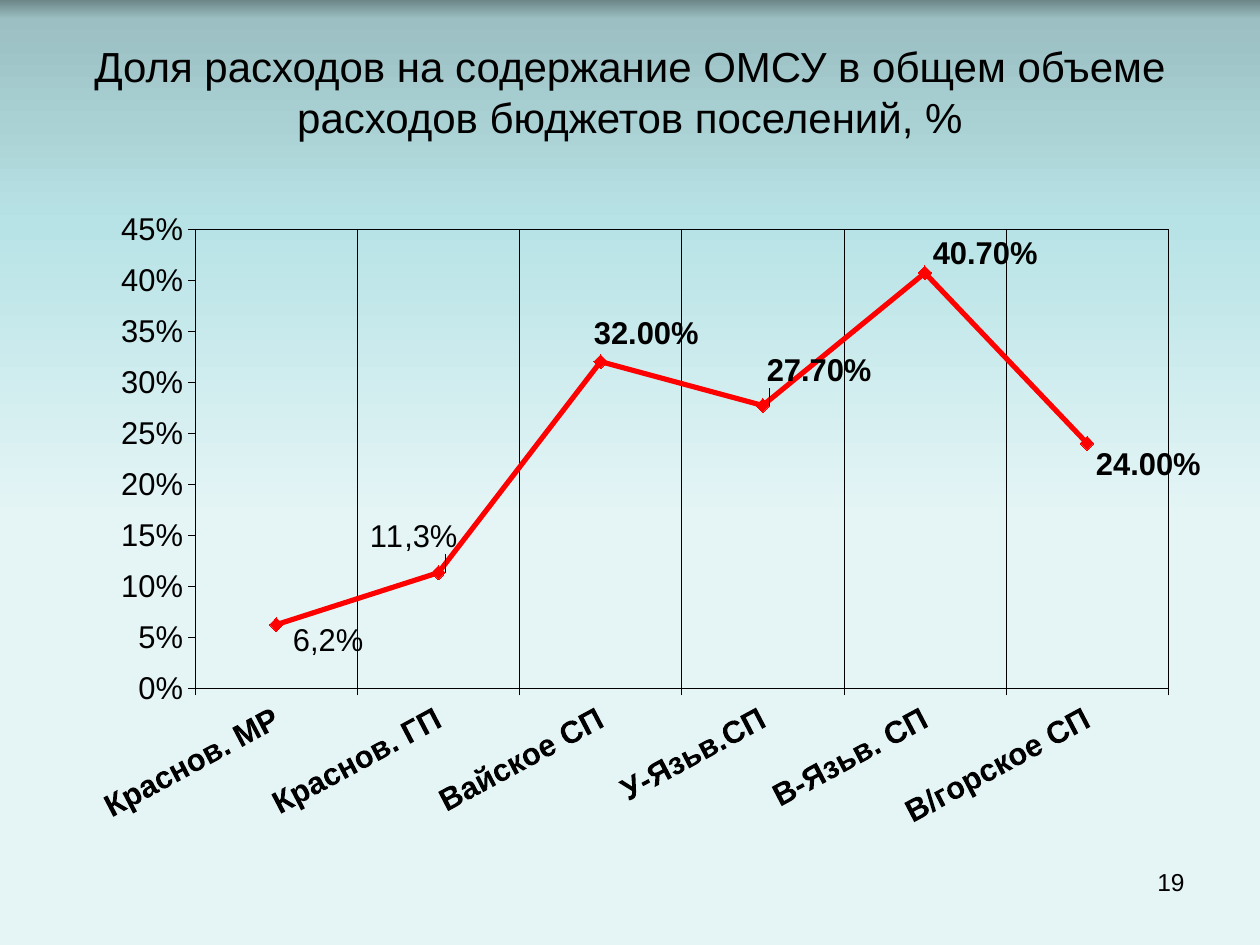
from dataclasses import dataclass, field

from lxml.etree import SubElement
from pptx import Presentation
from pptx.chart.data import CategoryChartData
from pptx.dml.color import RGBColor
from pptx.enum.chart import XL_CHART_TYPE, XL_LABEL_POSITION, XL_MARKER_STYLE, XL_TICK_MARK
from pptx.enum.text import MSO_ANCHOR, PP_ALIGN
from pptx.oxml import parse_xml
from pptx.oxml.ns import nsdecls, qn
from pptx.util import Cm, Pt

COLORS = {
    "text": "000000",
    "share": "FF0000",
    "top edge": "6D8688",
    "upper": "9BBFC2",
    "middle": "B8E3E6",
    "lower": "E5F5F6",
}
BACKDROP = [(0, "top edge"), (2, "upper"), (24, "middle"), (55, "lower"), (100, "lower")]

SHARES = {
    "Краснов. МР": 0.062,
    "Краснов. ГП": 0.113,
    "Вайское СП": 0.32,
    "У-Язьв.СП": 0.277,
    "В-Язьв. СП": 0.407,
    "В/горское СП": 0.24,
}
LABEL_SHIFTS = [(0.1, 0.32), (-1.65, -0.73), (-0.38, -0.58), (-0.16, -0.7), (-0.08, -0.4), (-0.06, 0.42)]
LABEL_TEXTS = {0: "6,2%", 1: "11,3%"}

CHART_BOX = (1.63, 3.73, 22.58, 13.87)
PLOT_BOX = (2.35, 0.89, 19.98, 9.25)


def style_font(font, size=18, bold=False, color="text", name="Arial"):
    font.name = name
    font.size = Pt(size)
    font.bold = bold
    font.color.rgb = RGBColor.from_string(COLORS[color])


def write(frame, text, align=None, anchor=None, **font_format):
    frame.word_wrap = True
    frame.vertical_anchor = anchor
    paragraph = frame.paragraphs[0]
    paragraph.alignment = align
    run = paragraph.add_run()
    run.text = text
    style_font(run.font, **font_format)


def manual_layout(**settings):
    layout = parse_xml(f"<c:layout {nsdecls('c')}><c:manualLayout/></c:layout>")
    for tag, value in settings.items():
        SubElement(layout[0], qn(f"c:{tag}")).set("val", str(value))
    return layout


@dataclass
class Deck:
    slide: object
    colors: dict = field(default_factory=lambda: COLORS)
    hairline: float = 0.25

    def color(self, key):
        return RGBColor.from_string(self.colors[key])

    def backdrop(self, stops):
        fill = self.slide.background.fill
        fill.gradient()
        fill.gradient_angle = 270
        stop_list = self.slide.element.find(f".//{qn('a:gsLst')}")
        for stop in list(stop_list):
            stop_list.remove(stop)
        for percent, key in stops:
            stop = SubElement(stop_list, qn("a:gs"), pos=str(percent * 1000))
            SubElement(stop, qn("a:srgbClr"), val=self.colors[key])

    def title(self, text, left, top, width, height):
        heading = self.slide.shapes.title
        heading.left, heading.top = Cm(left), Cm(top)
        heading.width, heading.height = Cm(width), Cm(height)
        write(heading.text_frame, text, align=PP_ALIGN.CENTER, anchor=MSO_ANCHOR.MIDDLE, size=24)

    def text(self, text, left, top, width, height, **text_format):
        box = self.slide.shapes.add_textbox(Cm(left), Cm(top), Cm(width), Cm(height))
        write(box.text_frame, text, **text_format)

    def outline(self, line):
        line.color.rgb = self.color("text")
        line.width = Pt(self.hairline)

    def axis(self, axis, bold):
        axis.major_tick_mark = XL_TICK_MARK.OUTSIDE
        axis.minor_tick_mark = XL_TICK_MARK.NONE
        style_font(axis.tick_labels.font, bold=bold)
        self.outline(axis.format.line)

    def line_chart(self, values, box, plot_box):
        data = CategoryChartData(number_format="0.00%")
        data.categories = list(values)
        data.add_series("Series 1", list(values.values()))
        chart = self.slide.shapes.add_chart(
            XL_CHART_TYPE.LINE_MARKERS, *[Cm(length) for length in box], data
        ).chart
        chart.has_legend = False
        chart.has_title = False
        style_font(chart.font, bold=True)
        chart.plots[0].vary_by_categories = False

        places, shares = chart.category_axis, chart.value_axis
        self.axis(places, bold=True)
        places.has_major_gridlines = True
        self.outline(places.major_gridlines.format.line)
        slant = places._element.find(f"{qn('c:txPr')}/{qn('a:bodyPr')}")
        slant.set("rot", str(-28 * 60000))
        slant.set("vert", "horz")

        self.axis(shares, bold=False)
        shares.has_major_gridlines = False
        shares.minimum_scale, shares.maximum_scale, shares.major_unit = 0, 0.45, 0.05
        shares.tick_labels.number_format = "0%"
        shares.tick_labels.number_format_is_linked = False

        self.plot_frame(chart, box, plot_box)
        return chart

    def plot_frame(self, chart, box, plot_box):
        left, top, width, height = plot_box
        plot_area = chart._chartSpace.chart.plotArea
        for layout in plot_area.findall(qn("c:layout")):
            plot_area.remove(layout)
        plot_area.insert(0, manual_layout(
            layoutTarget="inner", xMode="edge", yMode="edge",
            x=left / box[2], y=top / box[3], w=width / box[2], h=height / box[3],
        ))
        plot_area.append(parse_xml(
            f"<c:spPr {nsdecls('c', 'a')}><a:noFill/><a:ln w='{Pt(self.hairline)}'><a:solidFill>"
            f"<a:srgbClr val='{self.colors['text']}'/></a:solidFill></a:ln></c:spPr>"
        ))

    def series(self, series, key):
        series.smooth = False
        series.format.line.color.rgb = self.color(key)
        series.format.line.width = Pt(3)
        marker = series.marker
        marker.style = XL_MARKER_STYLE.DIAMOND
        marker.size = 8
        marker.format.fill.solid()
        marker.format.fill.fore_color.rgb = self.color(key)
        marker.format.line.color.rgb = self.color(key)

    def labels(self, series, texts, shifts, box):
        labels = series.data_labels
        labels.show_value = True
        labels.number_format = "0.00%"
        labels.number_format_is_linked = False
        style_font(labels.font, bold=True)
        for index, (right, down) in enumerate(shifts):
            label = series.points[index].data_label
            if index in texts:
                write(label.text_frame, texts[index])
            else:
                style_font(label.font, bold=True)
            label.position = XL_LABEL_POSITION.RIGHT
            entry = labels._element.findall(qn("c:dLbl"))[index]
            entry.insert(1, manual_layout(x=right / box[2], y=down / box[3]))


def main():
    presentation = Presentation()
    presentation.slide_width, presentation.slide_height = Cm(25.4), Cm(19.05)
    deck = Deck(presentation.slides.add_slide(presentation.slide_layouts[5]))
    deck.backdrop(BACKDROP)
    deck.text("19", 18.21, 17.35, 5.92, 1.32, align=PP_ALIGN.RIGHT, size=14)
    deck.title(
        "Доля расходов на содержание ОМСУ в общем объеме расходов бюджетов поселений, %",
        1.27, 0.76, 22.86, 2.16,
    )
    chart = deck.line_chart(SHARES, CHART_BOX, PLOT_BOX)
    share_line = chart.plots[0].series[0]
    deck.series(share_line, "share")
    deck.labels(share_line, LABEL_TEXTS, LABEL_SHIFTS, CHART_BOX)
    presentation.save("out.pptx")


if __name__ == "__main__":
    main()
